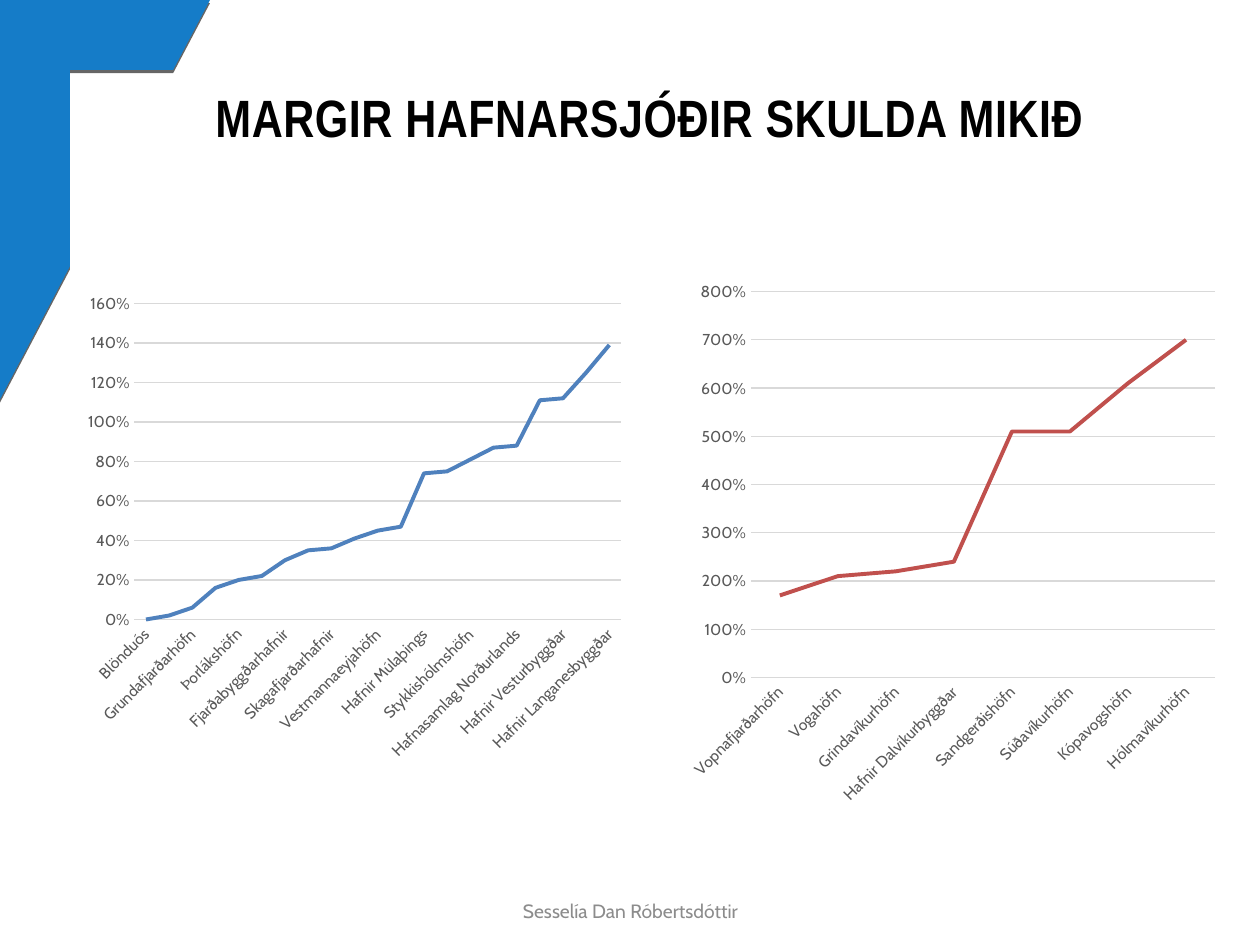
from pptx import Presentation
from pptx.chart.data import CategoryChartData as ChartData
from pptx.dml.color import RGBColor
from pptx.enum.chart import XL_CHART_TYPE as ChartType, XL_MARKER_STYLE as Marker, XL_TICK_MARK as Tick
from pptx.enum.shapes import MSO_SHAPE as Shape
from pptx.enum.text import MSO_ANCHOR as Anchor, PP_ALIGN as Align
from pptx.oxml import parse_xml
from pptx.oxml.ns import nsdecls, qn
from pptx.util import Inches, Pt

BLACK = RGBColor(0x00, 0x00, 0x00)
CORNER_BLUE = RGBColor(0x15, 0x7C, 0xC8)
LABEL_GRAY = RGBColor(0x59, 0x59, 0x59)
FOOTER_GRAY = RGBColor(0x8C, 0x8C, 0x8C)
GRID_GRAY = RGBColor(0xD9, 0xD9, 0xD9)
LINE_BLUE = RGBColor(0x4F, 0x81, 0xBD)
LINE_RED = RGBColor(0xC0, 0x50, 0x4D)
BODY_FONT = "Cabin"

LOW_DEBT = {
    "Blönduós": 0, "Skagastrandarhöfn": 0.02, "Grundafjarðarhöfn": 0.06,
    "Faxaflóahafnir": 0.16, "Þorlákshöfn": 0.2, "Bolungarvíkurhöfn": 0.22,
    "Fjarðabyggðarhafnir": 0.3, "Hafnir Snæfellsbæjar": 0.35,
    "Skagafjarðarhafnir": 0.36, "Hafnir Fjallabyggðar": 0.41,
    "Vestmannaeyjahöfn": 0.45, "Hornafjarðarhafnir": 0.47,
    "Hafnir Múlaþings": 0.74, "Hafnarfjarðarhöfn": 0.75,
    "Stykkishólmshöfn": 0.81, "Tálknafjarðarhöfn": 0.87,
    "Hafnasamlag Norðurlands": 0.88, "Hafnir Ísafjarðarbæjar": 1.11,
    "Hafnir Vesturbyggðar": 1.12, "Reykhólahöfn": 1.25,
    "Hafnir Langanesbyggðar": 1.39,
}
HIGH_DEBT = {
    "Vopnafjarðarhöfn": 1.7, "Vogahöfn": 2.1, "Grindavíkurhöfn": 2.2,
    "Hafnir Dalvíkurbyggðar": 2.4, "Sandgerðishöfn": 5.1,
    "Súðavíkurhöfn": 5.1, "Kópavogshöfn": 6.1, "Hólmavíkurhöfn": 7,
}


def style_font(font, name, size, color):
    font.name = name
    font.size = Pt(size)
    font.color.rgb = color


deck = Presentation()
deck.slide_width = Inches(10)
deck.slide_height = Inches(7.5)
page = deck.slides.add_slide(deck.slide_layouts[5])

title = page.shapes.title
title.left, title.top = Inches(1.61), Inches(0.3)
title.width, title.height = Inches(8.15), Inches(1.25)
title.text_frame.text = "MARGIR HAFNARSJÓÐIR SKULDA MIKIÐ"
title.text_frame.vertical_anchor = Anchor.MIDDLE
para = title.text_frame.paragraphs[0]
para.alignment = Align.LEFT
span = para.runs[0]
style_font(span.font, "Arial Narrow", 30, BLACK)
span.font.bold = True
span.font._element.set("spc", "30")

corner = page.shapes.add_shape(
    Shape.HALF_FRAME, 0, 0, deck.slide_width // 6, Inches(3.17))
corner.fill.solid()
corner.fill.fore_color.rgb = CORNER_BLUE
corner.line.fill.background()
corner.element.spPr.append(parse_xml(
    f'<a:effectLst {nsdecls("a")}>'
    f'<a:outerShdw blurRad="0" dist="{Pt(1.8)}" dir="5400000" rotWithShape="0">'
    '<a:srgbClr val="000000"><a:alpha val="60000"/></a:srgbClr>'
    '</a:outerShdw></a:effectLst>'))
title.element.addprevious(corner.element)

footer = page.shapes.add_textbox(Inches(3.42), Inches(7.07), Inches(3.17), Inches(0.32))
footer.text_frame.word_wrap = True
footer.text_frame.vertical_anchor = Anchor.MIDDLE
footer.text_frame.text = "Sesselía Dan Róbertsdóttir"
para = footer.text_frame.paragraphs[0]
para.alignment = Align.CENTER
para.space_after = Pt(6)
style_font(para.runs[0].font, BODY_FONT, 11, FOOTER_GRAY)

charts = []
for left, width, debts, color, top_value, step in (
    (0.63, 4.37, LOW_DEBT, LINE_BLUE, 1.6, 0.2),
    (5.39, 4.34, HIGH_DEBT, LINE_RED, 8, 1),
):
    data = ChartData(number_format="0%")
    data.categories = list(debts)
    data.add_series("Series 1", list(debts.values()))
    chart = page.shapes.add_chart(
        ChartType.LINE, Inches(left), Inches(2.15), Inches(width), Inches(4.32), data).chart
    chart.has_legend = False
    chart.has_title = False
    style_font(chart.font, BODY_FONT, 10, BLACK)

    plot = chart.plots[0]
    plot.vary_by_categories = False
    series = plot.series[0]
    series.smooth = False
    series.marker.style = Marker.NONE
    series.format.line.color.rgb = color
    series.format.line.width = Pt(2.25)

    names, shares = chart.category_axis, chart.value_axis
    for axis in (names, shares):
        axis.major_tick_mark = Tick.NONE
        axis.minor_tick_mark = Tick.NONE
        style_font(axis.tick_labels.font, BODY_FONT, 9, LABEL_GRAY)
    shares.minimum_scale = 0
    shares.maximum_scale = top_value
    shares.major_unit = step
    shares.tick_labels.number_format = "0%"
    shares.tick_labels.number_format_is_linked = False
    shares.format.line.fill.background()
    for line in (names.format.line, shares.major_gridlines.format.line):
        line.color.rgb = GRID_GRAY
        line.width = Pt(0.75)
    label_body = names._element.find(qn("c:txPr")).find(qn("a:bodyPr"))
    label_body.set("rot", "-2700000")
    label_body.set("vert", "horz")
    charts.append(chart)

plot_width, plot_height = 38 / 43, 18 / 31
plot_area = charts[0].plots[0]._element.getparent()
for old_layout in plot_area.findall(qn("c:layout")):
    plot_area.remove(old_layout)
plot_area.insert(0, parse_xml(
    f'<c:layout {nsdecls("c")}><c:manualLayout><c:layoutTarget val="inner"/>'
    '<c:xMode val="edge"/><c:yMode val="edge"/><c:x val="0.1"/><c:y val="0.06"/>'
    f'<c:w val="{plot_width}"/><c:h val="{plot_height}"/></c:manualLayout></c:layout>'))

deck.save("out.pptx")
